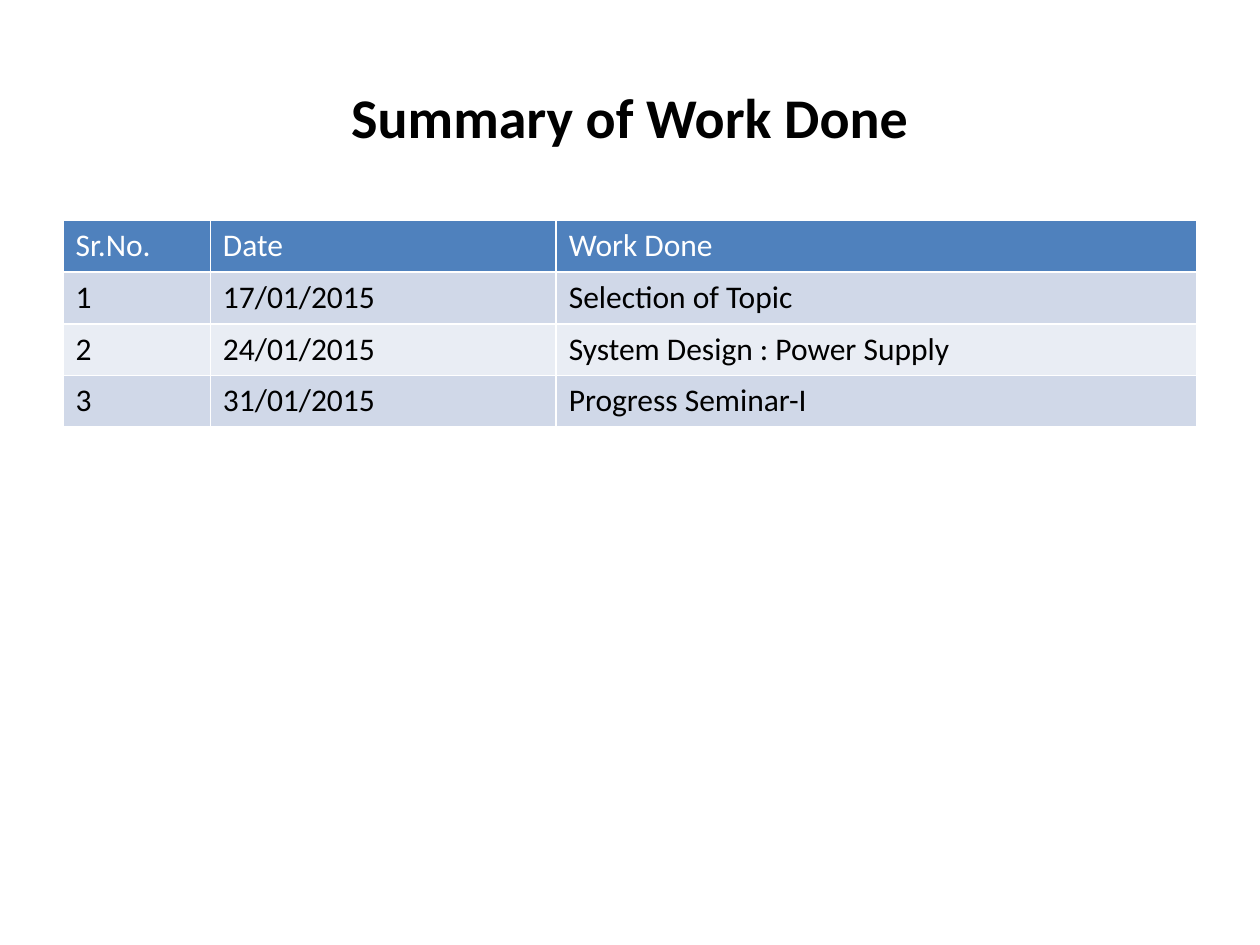
from dataclasses import dataclass

from pptx import Presentation
from pptx.dml.color import RGBColor as Color
from pptx.enum.text import MSO_ANCHOR as Anchor, PP_ALIGN as Align
from pptx.util import Inches, Pt

TITLE = "Summary of Work Done"
ROWS = [
    ("Sr.No.", "Date", "Work Done"),
    ("1", "17/01/2015", "Selection of Topic"),
    ("2", "24/01/2015", "System Design : Power Supply"),
    ("3", "31/01/2015", "Progress Seminar-I"),
]
COLUMN_SHARES = (0.13, 0.305, 0.565)


@dataclass(frozen=True)
class Theme:
    font: str = "Calibri"
    title_size: int = 32
    table_size: int = 18
    text: str = "000000"
    header_text: str = "FFFFFF"
    header_fill: str = "4F81BD"
    bands: tuple = ("E9EDF4", "D0D8E8")


THEME = Theme()
WIDTH, HEIGHT = 10, 7.5
MARGIN = 0.05 * WIDTH
CONTENT_WIDTH = WIDTH - 2 * MARGIN
TITLE_TOP, TITLE_HEIGHT = 0.04 * HEIGHT, 1.25
TABLE_TOP, ROW_HEIGHT = 1.75, 0.41


def write(frame, text, size, color=THEME.text, bold=False, align=Align.LEFT):
    para = frame.paragraphs[0]
    para.alignment = align
    span = para.add_run()
    span.text = text
    span.font.name = THEME.font
    span.font.size = Pt(size)
    span.font.bold = bold
    span.font.color.rgb = Color.from_string(color)


def add_title(page):
    title = page.shapes.title
    title.left, title.top = Inches(MARGIN), Inches(TITLE_TOP)
    title.width, title.height = Inches(CONTENT_WIDTH), Inches(TITLE_HEIGHT)
    title.text_frame.vertical_anchor = Anchor.MIDDLE
    write(title.text_frame, TITLE, THEME.title_size, bold=True, align=Align.CENTER)


def add_work_table(page):
    table = page.shapes.add_table(
        len(ROWS), len(COLUMN_SHARES), Inches(MARGIN), Inches(TABLE_TOP),
        Inches(CONTENT_WIDTH), Inches(ROW_HEIGHT * len(ROWS)),
    ).table
    for column, share in zip(table.columns, COLUMN_SHARES):
        column.width = Inches(CONTENT_WIDTH * share)
    for index, values in enumerate(ROWS):
        header = index == 0
        fill = THEME.header_fill if header else THEME.bands[index % 2]
        color = THEME.header_text if header else THEME.text
        for cell, value in zip(table.rows[index].cells, values):
            cell.fill.solid()
            cell.fill.fore_color.rgb = Color.from_string(fill)
            write(cell.text_frame, value, THEME.table_size, color=color)


def main():
    deck = Presentation()
    deck.slide_width, deck.slide_height = Inches(WIDTH), Inches(HEIGHT)
    page = deck.slides.add_slide(deck.slide_layouts[5])
    add_title(page)
    add_work_table(page)
    deck.save("out.pptx")


if __name__ == "__main__":
    main()
